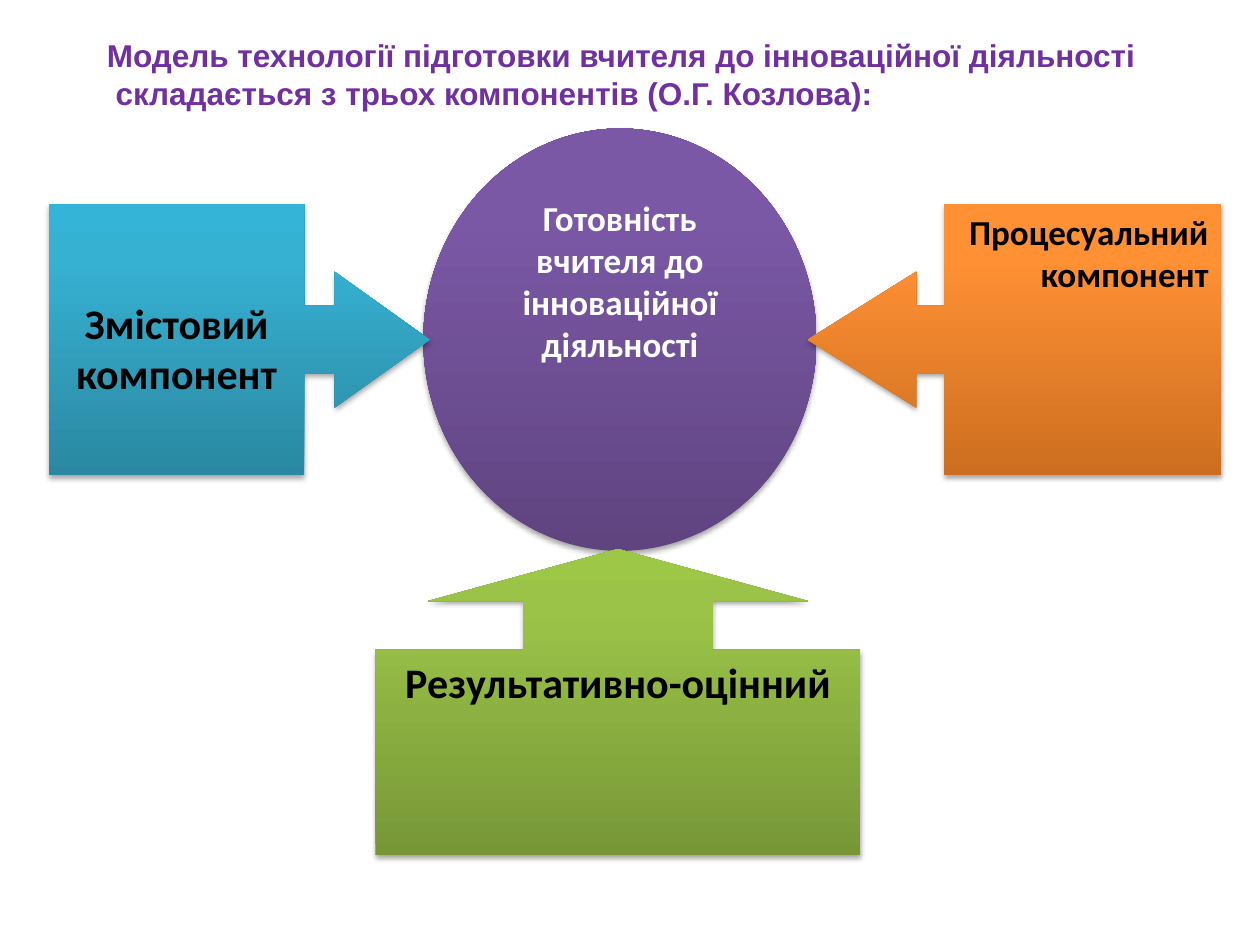
import copy
from dataclasses import dataclass

import pptx
import pptx.dml.color
import pptx.enum.shapes
import pptx.enum.text
import pptx.oxml
import pptx.oxml.ns
import pptx.util

SHAPE = pptx.enum.shapes.MSO_SHAPE
ALIGN = pptx.enum.text.PP_ALIGN
ANCHOR = pptx.enum.text.MSO_ANCHOR
WIDTH, HEIGHT = pptx.util.Inches(10), pptx.util.Inches(7.5)


@dataclass(frozen=True)
class Theme:
    violet: tuple = ("5F4480", "7B58A6", "7C57A8")
    blue: tuple = ("2A88A2", "37B1D2", "34B4D6")
    orange: tuple = ("CC6E20", "FF9034", "FF9136")
    green: tuple = ("779737", "9BC348", "9DC746")
    title: str = "7030A0"
    dark: str = "000000"
    light: str = "FFFFFF"
    title_size: int = 18
    body_size: int = 20
    large_size: int = 24
    title_font: str = "Arial"
    body_font: str = "Calibri"


THEME = Theme()


def rgb(value):
    return pptx.dml.color.RGBColor.from_string(value)


def place(left, top, width, height):
    """Turn shares of the slide's size into lengths."""
    return (int(left * WIDTH), int(top * HEIGHT),
            int(width * WIDTH), int(height * HEIGHT))


def write(frame, *paragraphs, size, color=THEME.dark, font=THEME.body_font,
          align=ALIGN.CENTER, anchor=ANCHOR.TOP, wrap=True, inset_top=0.05,
          after=0, indent=0):
    frame.word_wrap = wrap
    frame.vertical_anchor = anchor
    frame.margin_top = pptx.util.Inches(inset_top)
    for number, text in enumerate(paragraphs):
        paragraph = frame.add_paragraph() if number else frame.paragraphs[0]
        paragraph.text = text
        paragraph.alignment = align
        paragraph.space_after = pptx.util.Pt(after)
        if indent:
            paragraph._p.get_or_add_pPr().set("indent", str(pptx.util.Inches(indent)))
        for run in paragraph.runs:
            run.font.size = pptx.util.Pt(size)
            run.font.name = font
            run.font.bold = True
            run.font.color.rgb = rgb(color)


def shade(shape, colors):
    """Fill from bottom to top with three colour stops."""
    shape.fill.gradient()
    shape.fill.gradient_angle = 90
    stop_list = shape._element.spPr.find(".//" + pptx.oxml.ns.qn("a:gsLst"))
    stop_list.append(copy.deepcopy(stop_list[-1]))
    for stop, position, color in zip(shape.fill.gradient_stops, (0, 0.8, 1), colors):
        stop.position = position
        stop.color.rgb = rgb(color)


def cast_shadow(shape):
    shape.shadow.inherit = False
    effects = shape._element.spPr.find(pptx.oxml.ns.qn("a:effectLst"))
    effects.append(pptx.oxml.parse_xml(
        f'<a:outerShdw {pptx.oxml.ns.nsdecls("a")} blurRad="{pptx.util.Pt(3.1)}" '
        f'dist="{pptx.util.Pt(1.8)}" dir="5400000" rotWithShape="0">'
        '<a:srgbClr val="000000"><a:alpha val="35000"/></a:srgbClr></a:outerShdw>'))


def add_component(slide, kind, box, colors, text, adjustments=(), **text_format):
    component = slide.shapes.add_shape(kind, *place(*box))
    for index, value in enumerate(adjustments):
        component.adjustments[index] = value
    shade(component, colors)
    component.line.fill.background()
    cast_shadow(component)
    write(component.text_frame, text, after=10, **text_format)


def add_title(slide):
    title = slide.shapes.add_textbox(*place(0.047, 0.031, 0.874, 0.094))
    write(title.text_frame,
          "Модель технології підготовки вчителя до інноваційної діяльності",
          " складається з трьох компонентів (О.Г. Козлова):",
          size=THEME.title_size, color=THEME.title, font=THEME.title_font,
          align=ALIGN.JUSTIFY, anchor=ANCHOR.MIDDLE, wrap=False, indent=0.28)


def main():
    deck = pptx.Presentation()
    deck.slide_width, deck.slide_height = WIDTH, HEIGHT
    slide = deck.slides.add_slide(deck.slide_layouts[6])

    add_component(slide, SHAPE.OVAL, (0.336, 0.136, 0.312, 0.447), THEME.violet,
                  "Готовність\vвчителя до\vінноваційної\vдіяльності",
                  size=THEME.body_size, color=THEME.light)
    add_component(slide, SHAPE.RIGHT_ARROW_CALLOUT, (0.039, 0.216, 0.302, 0.287),
                  THEME.blue, "Змістовий\vкомпонент", (0.25, 0.25, 0.35, 0.67),
                  size=THEME.large_size, inset_top=0.74)
    add_component(slide, SHAPE.LEFT_ARROW_CALLOUT, (0.641, 0.216, 0.328, 0.287),
                  THEME.orange, "Процесуальний компонент", (0.25, 0.25, 0.4, 0.67),
                  size=THEME.body_size, align=ALIGN.RIGHT)
    add_component(slide, SHAPE.UP_ARROW_CALLOUT, (0.298, 0.581, 0.385, 0.324),
                  THEME.green, "Результативно-оцінний", (0.62, 0.62, 0.17, 0.67),
                  size=THEME.large_size)
    add_title(slide)
    deck.save("out.pptx")


if __name__ == "__main__":
    main()
